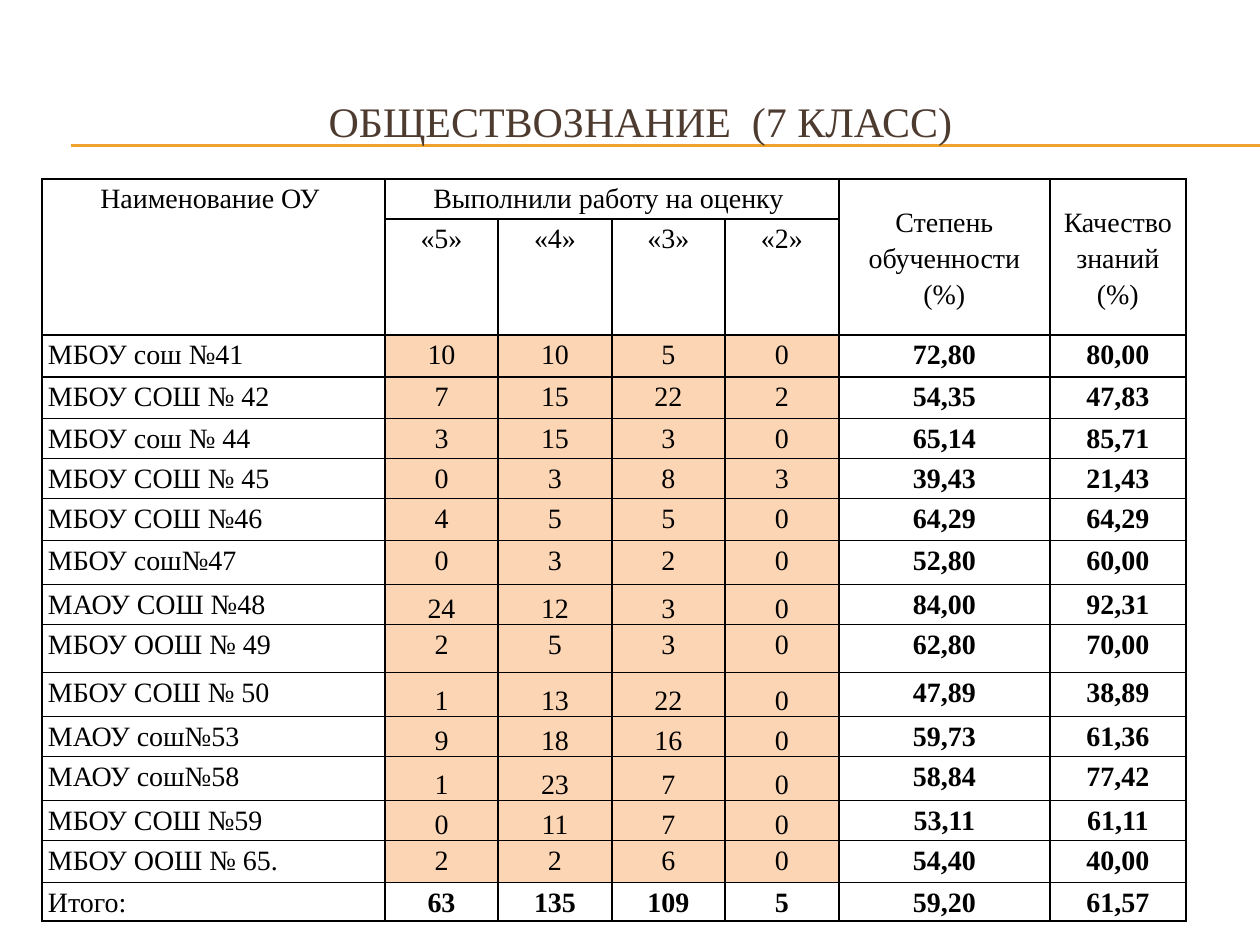
from dataclasses import dataclass

from lxml.etree import SubElement
from pptx import Presentation
from pptx.dml.color import RGBColor
from pptx.enum.shapes import MSO_CONNECTOR
from pptx.enum.text import MSO_ANCHOR, PP_ALIGN
from pptx.oxml.ns import qn
from pptx.util import Emu, Pt


@dataclass(frozen=True)
class Theme:
    font: str = "Times New Roman"
    title_size: int = 24
    cell_size: int = 16
    title: str = "4E3B30"
    text: str = "000000"
    border: str = "000000"
    rule: str = "F0A22E"
    name_fill: str = "FFFFFF"
    marks_fill: str = "FCD5B4"


THEME = Theme()
PX_PER_INCH = 126

COLUMNS = [343, 113, 114, 113, 114, 211, 136]
ROWS = [40, 33, 42, 42, 40, 40, 42, 44, 40, 48, 44, 40, 44, 40, 42, 36]
HEADER_ROWS = 2
MARKS = ["«5»", "«4»", "«3»", "«2»"]

# School, four mark counts, attainment, quality
SCHOOLS = [
    ("МБОУ сош №41", 10, 10, 5, 0, "72,80", "80,00"),
    ("МБОУ СОШ № 42", 7, 15, 22, 2, "54,35", "47,83"),
    ("МБОУ сош № 44", 3, 15, 3, 0, "65,14", "85,71"),
    ("МБОУ СОШ № 45", 0, 3, 8, 3, "39,43", "21,43"),
    ("МБОУ СОШ №46", 4, 5, 5, 0, "64,29", "64,29"),
    ("МБОУ сош№47", 0, 3, 2, 0, "52,80", "60,00"),
    ("МАОУ СОШ №48", 24, 12, 3, 0, "84,00", "92,31"),
    ("МБОУ ООШ № 49", 2, 5, 3, 0, "62,80", "70,00"),
    ("МБОУ СОШ № 50", 1, 13, 22, 0, "47,89", "38,89"),
    ("МАОУ сош№53", 9, 18, 16, 0, "59,73", "61,36"),
    ("МАОУ сош№58", 1, 23, 7, 0, "58,84", "77,42"),
    ("МБОУ СОШ №59", 0, 11, 7, 0, "53,11", "61,11"),
    ("МБОУ ООШ № 65.", 2, 2, 6, 0, "54,40", "40,00"),
]
TOTAL = ("Итого:", 63, 135, 109, 5, "59,20", "61,57")
BOTTOM_ALIGNED = {6, 8, 9, 10, 11}  # schools whose marks sit at the cell bottom


def px(n):
    return Emu(round(n * 914400 / PX_PER_INCH))


def rgb(color):
    return RGBColor.from_string(color)


def style_paragraph(p, size, color, align=PP_ALIGN.CENTER, bold=False):
    p.alignment = align
    p.font.name = THEME.font
    p.font.size = Pt(size)
    p.font.bold = bold
    p.font.color.rgb = rgb(color)


def add_rule(slide, y):
    line = slide.shapes.add_connector(
        MSO_CONNECTOR.STRAIGHT, px(71), px(y), px(1260), px(y))
    line.line.color.rgb = rgb(THEME.rule)
    line.line.width = Pt(0.75)
    SubElement(line._element.spPr, qn("a:effectLst"))


def add_title(slide, text):
    tf = slide.shapes.add_textbox(px(42), px(63), px(1197), px(116)).text_frame
    tf.word_wrap = True
    tf.vertical_anchor = MSO_ANCHOR.MIDDLE
    p = tf.paragraphs[0]
    p.text = text
    style_paragraph(p, THEME.title_size, THEME.title)


def set_borders(cell):
    tc_pr = cell._tc.get_or_add_tcPr()
    for side in ("lnL", "lnR", "lnT", "lnB"):
        ln = SubElement(tc_pr, qn(f"a:{side}"), w=str(Pt(1)))
        fill = SubElement(ln, qn("a:solidFill"))
        SubElement(fill, qn("a:srgbClr"), val=THEME.border)


def prepare_cell(cell):
    set_borders(cell)
    cell.fill.background()
    cell.margin_left = cell.margin_right = px(6)
    cell.margin_top = cell.margin_bottom = 0
    # Cells hidden by a merge still count towards the row height
    p = cell.text_frame.paragraphs[0]
    p.line_spacing = 1.15
    style_paragraph(p, THEME.cell_size, THEME.text)
    SubElement(p._p, qn("a:endParaRPr"), sz=str(THEME.cell_size * 100))
    SubElement(p._p[-1], qn("a:latin"), typeface=THEME.font)


def write_cell(cell, text, align=PP_ALIGN.CENTER, bold=False,
               anchor=MSO_ANCHOR.TOP, fill=None):
    cell.vertical_anchor = anchor
    p = cell.text_frame.paragraphs[0]
    p.text = str(text)
    p.alignment = align
    p.font.bold = bold
    if fill:
        cell.fill.solid()
        cell.fill.fore_color.rgb = rgb(fill)


def add_table(slide):
    table = slide.shapes.add_table(
        len(ROWS), len(COLUMNS), px(42), px(179), px(sum(COLUMNS)), px(sum(ROWS))).table
    table.first_row = table.horz_banding = False
    for column, width in zip(table.columns, COLUMNS):
        column.width = px(width)
    for row, height in zip(table.rows, ROWS):
        row.height = px(height)
    for cell in table.iter_cells():
        prepare_cell(cell)
    return table


def fill_header(table):
    for col in (0, 5, 6):
        table.cell(0, col).merge(table.cell(1, col))
    table.cell(0, 1).merge(table.cell(0, 4))
    write_cell(table.cell(0, 0), "Наименование ОУ ")
    write_cell(table.cell(0, 1), "Выполнили работу на оценку ")
    write_cell(table.cell(0, 5), "Степень обученности (%)", anchor=MSO_ANCHOR.MIDDLE)
    write_cell(table.cell(0, 6), "Качество знаний (%)", anchor=MSO_ANCHOR.MIDDLE)
    for col, mark in enumerate(MARKS, 1):
        write_cell(table.cell(1, col), mark)


def fill_row(table, row, values, marks_anchor=MSO_ANCHOR.TOP, total=False):
    name, *results = values
    write_cell(table.cell(row, 0), name, PP_ALIGN.LEFT,
               fill=None if total else THEME.name_fill)
    for col, value in enumerate(results, 1):
        if col <= len(MARKS) and not total:
            write_cell(table.cell(row, col), value, anchor=marks_anchor,
                       fill=THEME.marks_fill)
        else:
            write_cell(table.cell(row, col), value, bold=True)


def main():
    prs = Presentation()
    prs.slide_width, prs.slide_height = px(1260), px(945)
    slide = prs.slides.add_slide(prs.slide_layouts[6])

    # Heading over a double rule
    for y in (145, 146):
        add_rule(slide, y)
    add_title(slide, "ОБЩЕСТВОЗНАНИЕ  (7 КЛАСС)")

    # Results by school, then the total
    table = add_table(slide)
    fill_header(table)
    for i, school in enumerate(SCHOOLS):
        anchor = MSO_ANCHOR.BOTTOM if i in BOTTOM_ALIGNED else MSO_ANCHOR.TOP
        fill_row(table, HEADER_ROWS + i, school, anchor)
    fill_row(table, len(ROWS) - 1, TOTAL, total=True)

    prs.save("out.pptx")


if __name__ == "__main__":
    main()
